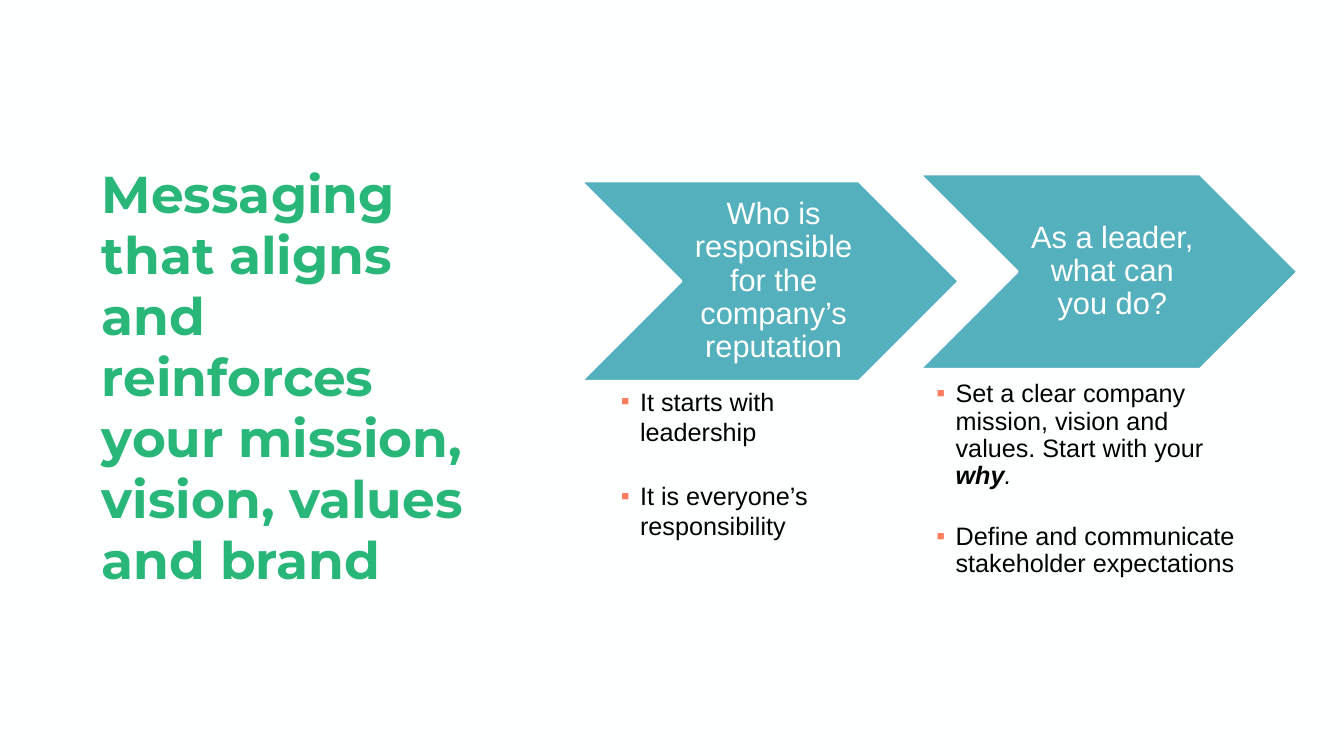
from dataclasses import dataclass

from lxml.etree import SubElement
from pptx import Presentation
from pptx.dml.color import RGBColor
from pptx.enum.shapes import MSO_SHAPE
from pptx.enum.text import MSO_ANCHOR, MSO_AUTO_SIZE, PP_ALIGN
from pptx.oxml.ns import qn
from pptx.shapes.base import BaseShape
from pptx.slide import Slide
from pptx.text.text import Font, TextFrame
from pptx.util import Inches, Pt

SLIDE_WIDTH = Inches(13.33)
SLIDE_HEIGHT = Inches(7.5)


@dataclass(frozen=True)
class Theme:
    paper: RGBColor = RGBColor.from_string("FEFFFF")
    heading: RGBColor = RGBColor.from_string("28B679")
    chevron: RGBColor = RGBColor.from_string("54B0BD")
    body: RGBColor = RGBColor.from_string("000000")
    bullet: RGBColor = RGBColor.from_string("FF7D5E")
    heading_font: str = "Montserrat"
    body_font: str = "Arial"
    heading_size: int = 37
    chevron_size: int = 22
    body_size: int = 18


THEME = Theme()


@dataclass(frozen=True)
class Area:
    """A rectangle in percent of the slide's width and height."""
    left: float
    top: float
    width: float
    height: float

    def emu(self) -> tuple[int, int, int, int]:
        return (round(SLIDE_WIDTH * self.left / 100), round(SLIDE_HEIGHT * self.top / 100),
                round(SLIDE_WIDTH * self.width / 100), round(SLIDE_HEIGHT * self.height / 100))


@dataclass(frozen=True)
class Span:
    text: str
    bold: bool = False
    italic: bool = False


@dataclass(frozen=True)
class Step:
    question: str
    chevron_area: Area
    answers: tuple[tuple[Span, ...], ...]
    list_area: Area
    line_spacing: float


TITLE = "Messaging that aligns and reinforces your mission, vision, values and brand"
TITLE_AREA = Area(6.83, 14.8, 29.18, 70.53)

STEPS = (
    Step("Who is responsible for the company’s reputation",
         Area(43.28, 24, 28.05, 26.4),
         ((Span("It starts with leadership"),),
          (Span("It is everyone’s responsibility"),)),
         Area(46.2, 51.07, 16.58, 24.8), 1.0),
    Step("As a leader, what can you do?",
         Area(68.48, 23.07, 28.05, 25.73),
         ((Span("Set a clear company mission, vision and values. Start with your "),
           Span("why", bold=True, italic=True), Span(".", italic=True)),
          (Span("Define and communicate stakeholder expectations"),)),
         Area(69.68, 50.4, 22.43, 25.33), 0.9),
)


def place(box: BaseShape, area: Area) -> None:
    box.left, box.top, box.width, box.height = area.emu()


def set_frame(frame: TextFrame, anchor: MSO_ANCHOR, left: float, others: float) -> None:
    """Fix the wrapping, the anchor and the margins, given in inches."""
    frame.word_wrap = True
    frame.auto_size = MSO_AUTO_SIZE.NONE
    frame.vertical_anchor = anchor
    frame.margin_left = Inches(left)
    frame.margin_top = frame.margin_right = frame.margin_bottom = Inches(others)


def style(font: Font, name: str, size: int, color: RGBColor,
          bold: bool = False, italic: bool = False) -> None:
    font.name, font.size = name, Pt(size)
    font.color.rgb = color
    font.bold, font.italic = bold, italic


def add_title(page: Slide) -> None:
    box = page.shapes.title
    place(box, TITLE_AREA)
    frame = box.text_frame
    frame.text = TITLE
    set_frame(frame, MSO_ANCHOR.MIDDLE, 0.1, 0.05)
    para = frame.paragraphs[0]
    para.alignment = PP_ALIGN.LEFT
    para.line_spacing = 0.98
    style(para.runs[0].font, THEME.heading_font, THEME.heading_size, THEME.heading, bold=True)


def add_chevron(page: Slide, step: Step) -> None:
    chevron = page.shapes.add_shape(MSO_SHAPE.CHEVRON, *step.chevron_area.emu())
    chevron.shadow.inherit = False
    chevron.fill.solid()
    chevron.fill.fore_color.rgb = THEME.chevron
    chevron.line.color.rgb = THEME.paper
    chevron.line.width = Pt(1.5)
    frame = chevron.text_frame
    frame.text = step.question
    set_frame(frame, MSO_ANCHOR.MIDDLE, 0.1, 0.03)
    para = frame.paragraphs[0]
    para.alignment = PP_ALIGN.CENTER
    para.line_spacing = 0.9
    style(para.runs[0].font, THEME.body_font, THEME.chevron_size, THEME.paper)


def fill_list(box: BaseShape, step: Step) -> None:
    place(box, step.list_area)
    frame = box.text_frame
    set_frame(frame, MSO_ANCHOR.TOP, 0, 0)
    for index, answer in enumerate(step.answers):
        para = frame.add_paragraph() if index else frame.paragraphs[0]
        properties = para._p.get_or_add_pPr()
        properties.set("marL", str(Inches(0.19)))
        properties.set("indent", str(-Inches(0.19)))
        bullet_color = SubElement(properties, qn("a:buClr"))
        SubElement(bullet_color, qn("a:srgbClr"), val=str(THEME.bullet))
        SubElement(properties, qn("a:buFont"), typeface=THEME.body_font)
        SubElement(properties, qn("a:buChar"), char="▪")
        para.alignment = PP_ALIGN.LEFT
        para.line_spacing = step.line_spacing
        para.space_before = Pt(24 if index else 0)
        para.space_after = Pt(0)
        for span in answer:
            run = para.add_run()
            run.text = span.text
            style(run.font, THEME.body_font, THEME.body_size, THEME.body,
                  span.bold, span.italic)


def main() -> None:
    deck = Presentation()
    deck.slide_width, deck.slide_height = SLIDE_WIDTH, SLIDE_HEIGHT
    two_content = deck.slide_layouts.get_by_name("Two Content")
    page = deck.slides.add_slide(two_content)
    page.background.fill.solid()
    page.background.fill.fore_color.rgb = THEME.paper
    add_title(page)
    for step, list_index in zip(STEPS, (1, 2)):
        add_chevron(page, step)
        fill_list(page.placeholders[list_index], step)
    deck.save("out.pptx")


if __name__ == "__main__":
    main()
